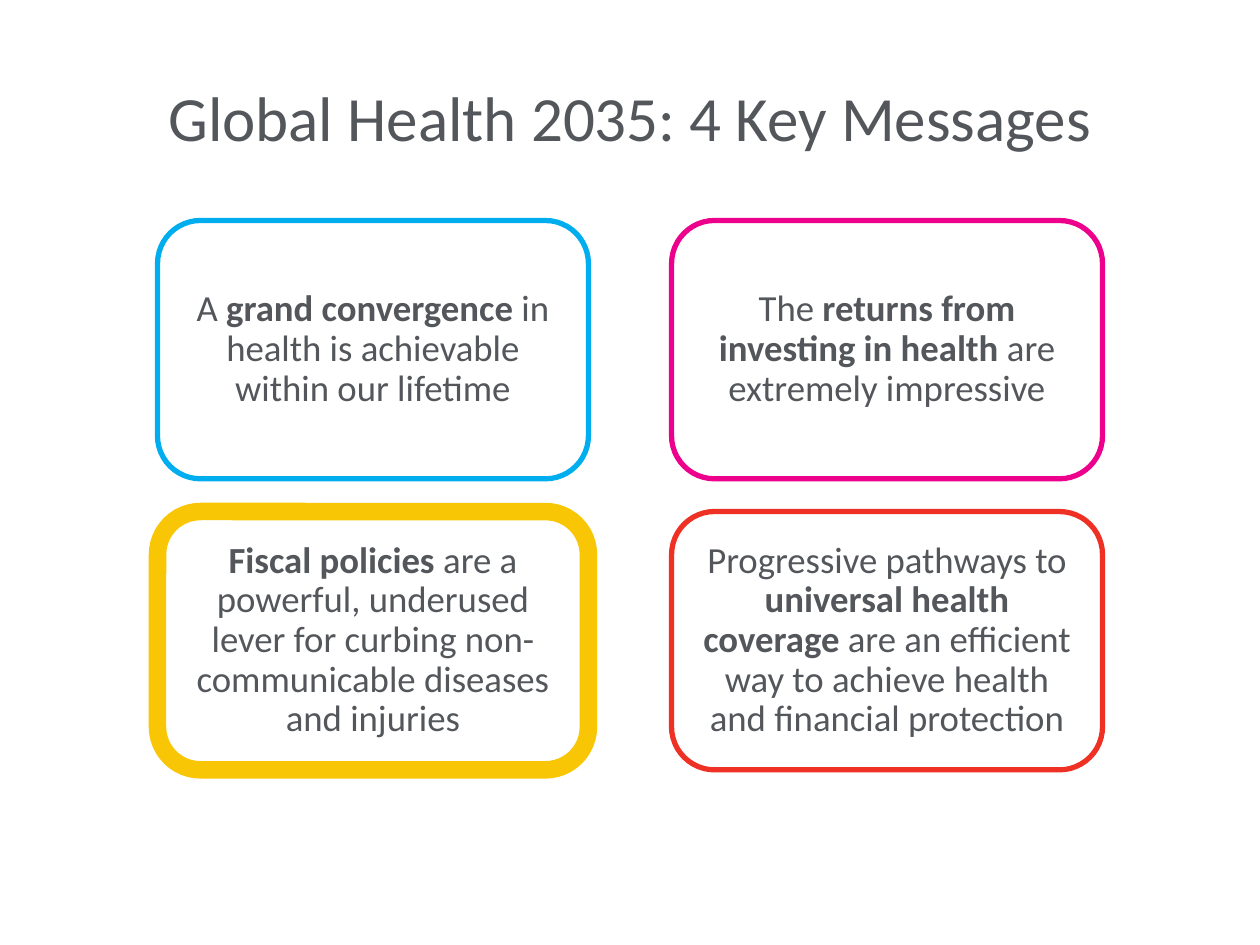
from pptx import Presentation
from pptx.dml.color import RGBColor
from pptx.enum.shapes import MSO_SHAPE
from pptx.enum.text import MSO_ANCHOR, PP_ALIGN
from pptx.util import Inches, Pt

FONT, TEXT, WHITE = "Calibri", "53565A", "FFFFFF"

# Line colour, line width in points, runs as (text, bold)
MESSAGES = [
    ("00AEEF", 3, [("A ", False), ("grand convergence", True),
                   (" in health is achievable within our lifetime", False)]),
    ("EC008C", 3, [("The ", False), ("returns from investing in health", True),
                   (" are extremely impressive", False)]),
    ("F9C606", 10, [("Fiscal policies ", True),
                    ("are a powerful, underused lever for curbing "
                     "non-communicable diseases and injuries", False)]),
    ("EE3124", 3, [("Progressive pathways to ", False),
                   ("universal health coverage ", True),
                   ("are an efficient way to achieve health "
                    "and financial protection", False)]),
]


def rgb(color):
    return RGBColor.from_string(color)


def add_run(p, text, size, bold=False):
    r = p.add_run()
    r.text = text
    r.font.name, r.font.size, r.font.bold = FONT, Pt(size), bold
    r.font.color.rgb = rgb(TEXT)


def place_title(slide, text, x, y, w, h):
    title = slide.shapes.title
    title.left, title.top = Inches(x), Inches(y)
    title.width, title.height = Inches(w), Inches(h)
    tf = title.text_frame
    tf.vertical_anchor = MSO_ANCHOR.MIDDLE
    p = tf.paragraphs[0]
    p.alignment = PP_ALIGN.CENTER
    add_run(p, text, 36)


def add_card(slide, x, y, w, h, color, width, runs):
    sp = slide.shapes.add_shape(MSO_SHAPE.ROUNDED_RECTANGLE,
                                Inches(x), Inches(y), Inches(w), Inches(h))
    sp.shadow.inherit = False
    sp.fill.solid()
    sp.fill.fore_color.rgb = rgb(WHITE)
    sp.line.color.rgb = rgb(color)
    sp.line.width = Pt(width)
    tf = sp.text_frame
    tf.word_wrap = True
    tf.vertical_anchor = MSO_ANCHOR.MIDDLE
    tf.margin_left = tf.margin_right = Inches(0.09)
    tf.margin_top = tf.margin_bottom = Inches(0.09)
    p = tf.paragraphs[0]
    p.alignment = PP_ALIGN.CENTER
    p.line_spacing = 0.9
    for text, bold in runs:
        add_run(p, text, 21, bold)


def add_message_grid(slide, x, y, w, h, gap_x=0.66, gap_y=0.26, columns=2):
    rows = len(MESSAGES) // columns
    card_w = (w - gap_x * (columns - 1)) / columns
    card_h = (h - gap_y * (rows - 1)) / rows
    for i, message in enumerate(MESSAGES):
        row, col = divmod(i, columns)
        add_card(slide, x + col * (card_w + gap_x), y + row * (card_h + gap_y),
                 card_w, card_h, *message)


def main():
    prs = Presentation()
    prs.slide_width, prs.slide_height = Inches(10), Inches(7.5)
    slide = prs.slides.add_slide(prs.slide_layouts[5])
    place_title(slide, "Global Health 2035: 4 Key Messages", 0.5, 0.3, 9, 1.25)
    add_message_grid(slide, 1.25, 1.75, 7.5, 4.36)
    prs.save("out.pptx")


if __name__ == "__main__":
    main()
